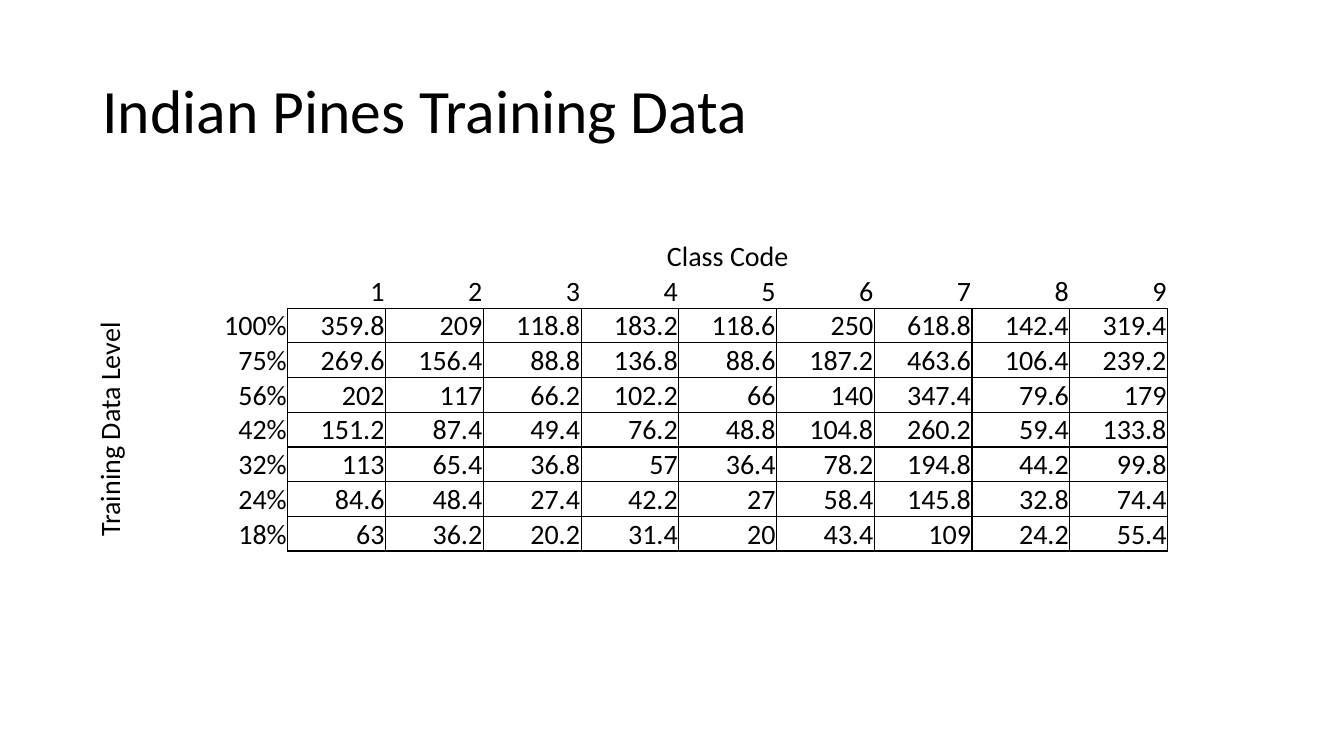
from lxml import etree
from pptx import Presentation
from pptx.dml.color import RGBColor
from pptx.enum.text import MSO_ANCHOR, PP_ALIGN
from pptx.oxml.ns import qn
from pptx.util import Pt

MIDDLE, BOTTOM = MSO_ANCHOR.MIDDLE, MSO_ANCHOR.BOTTOM
LEFT, CENTER, RIGHT = PP_ALIGN.LEFT, PP_ALIGN.CENTER, PP_ALIGN.RIGHT

COLORS = {"ink": "000000"}
FONT = "Calibri"
CODES = range(1, 10)
LEVELS = {
    "100%": (359.8, 209, 118.8, 183.2, 118.6, 250, 618.8, 142.4, 319.4),
    "75%": (269.6, 156.4, 88.8, 136.8, 88.6, 187.2, 463.6, 106.4, 239.2),
    "56%": (202, 117, 66.2, 102.2, 66, 140, 347.4, 79.6, 179),
    "42%": (151.2, 87.4, 49.4, 76.2, 48.8, 104.8, 260.2, 59.4, 133.8),
    "32%": (113, 65.4, 36.8, 57, 36.4, 78.2, 194.8, 44.2, 99.8),
    "24%": (84.6, 48.4, 27.4, 42.2, 27, 58.4, 145.8, 32.8, 74.4),
    "18%": (63, 36.2, 20.2, 31.4, 20, 43.4, 109, 24.2, 55.4),
}
HEAD_ROWS, SIDE_COLS = 2, 2
CELL = {
    "margin_left": Pt(0.75),
    "margin_right": Pt(0.75),
    "margin_top": Pt(0.75),
    "margin_bottom": 0,
    "vertical_anchor": BOTTOM,
}
PLAIN = {"first_row": False, "horz_banding": False}


def apply(target, values):
    for name, value in values.items():
        setattr(target, name, value)


class Deck:
    def __init__(self, slide):
        self.slide = slide

    def label(self, frame, text, size, align):
        par = frame.paragraphs[0]
        par.alignment = align
        run = par.add_run()
        run.text = str(text)
        apply(run.font, {"name": FONT, "size": Pt(size)})
        run.font.color.rgb = RGBColor.from_string(COLORS["ink"])

    def title(self, text, box):
        frame = self.slide.shapes.add_textbox(*map(Pt, box)).text_frame
        apply(frame, {"word_wrap": True, "vertical_anchor": MIDDLE})
        self.label(frame, text, 44, LEFT)
        frame.paragraphs[0].line_spacing = 0.9

    def edges(self, cell, drawn):
        """Draw the sides named in drawn and clear the others."""
        props = cell._tc.get_or_add_tcPr()
        for side in "LRTB":
            line = etree.SubElement(props, qn(f"a:ln{side}"), w=str(Pt(1)))
            if side in drawn:
                fill = etree.SubElement(line, qn("a:solidFill"))
                etree.SubElement(fill, qn("a:srgbClr"), val=COLORS["ink"])
            else:
                etree.SubElement(line, qn("a:noFill"))

    def table(self, rows, box):
        shape = self.slide.shapes.add_table(len(rows), len(rows[0]), *map(Pt, box))
        grid = shape.table
        apply(grid, PLAIN)
        for r, row in enumerate(rows):
            for c, text in enumerate(row):
                cell = grid.cell(r, c)
                apply(cell, CELL)
                body, data = r >= HEAD_ROWS, c >= SIDE_COLS
                drawn = "LRTB" if body and data else ""
                if body and c == SIDE_COLS - 1:
                    drawn = "R"
                elif data and r == HEAD_ROWS - 1:
                    drawn = "B"
                self.edges(cell, drawn)
                cell.fill.background()
                if text != "":
                    self.label(cell.text_frame, text, 20, RIGHT)
        return grid

    def span(self, grid, first, last, text, turn="horz"):
        cell = grid.cell(*first)
        cell.merge(grid.cell(*last))
        cell._tc.get_or_add_tcPr().set("vert", turn)
        self.label(cell.text_frame, text, 20, CENTER)


def main():
    prs = Presentation()
    prs.slide_width, prs.slide_height = Pt(960), Pt(540)
    deck = Deck(prs.slides.add_slide(prs.slide_layouts[6]))
    deck.title("Indian Pines Training Data", (66, 28.75, 828, 104.4))

    rows = [[""] * (SIDE_COLS + len(CODES)), ["", "", *CODES]]
    rows += [["", level, *counts] for level, counts in LEVELS.items()]
    grid = deck.table(rows, (66, 170.6, 768.24, 222.3))
    end_row, end_col = len(rows) - 1, len(rows[0]) - 1
    deck.span(grid, (0, SIDE_COLS), (0, end_col), "Class Code")
    deck.span(grid, (HEAD_ROWS, 0), (end_row, 0), "Training Data Level", "vert270")
    prs.save("out.pptx")


if __name__ == "__main__":
    main()
